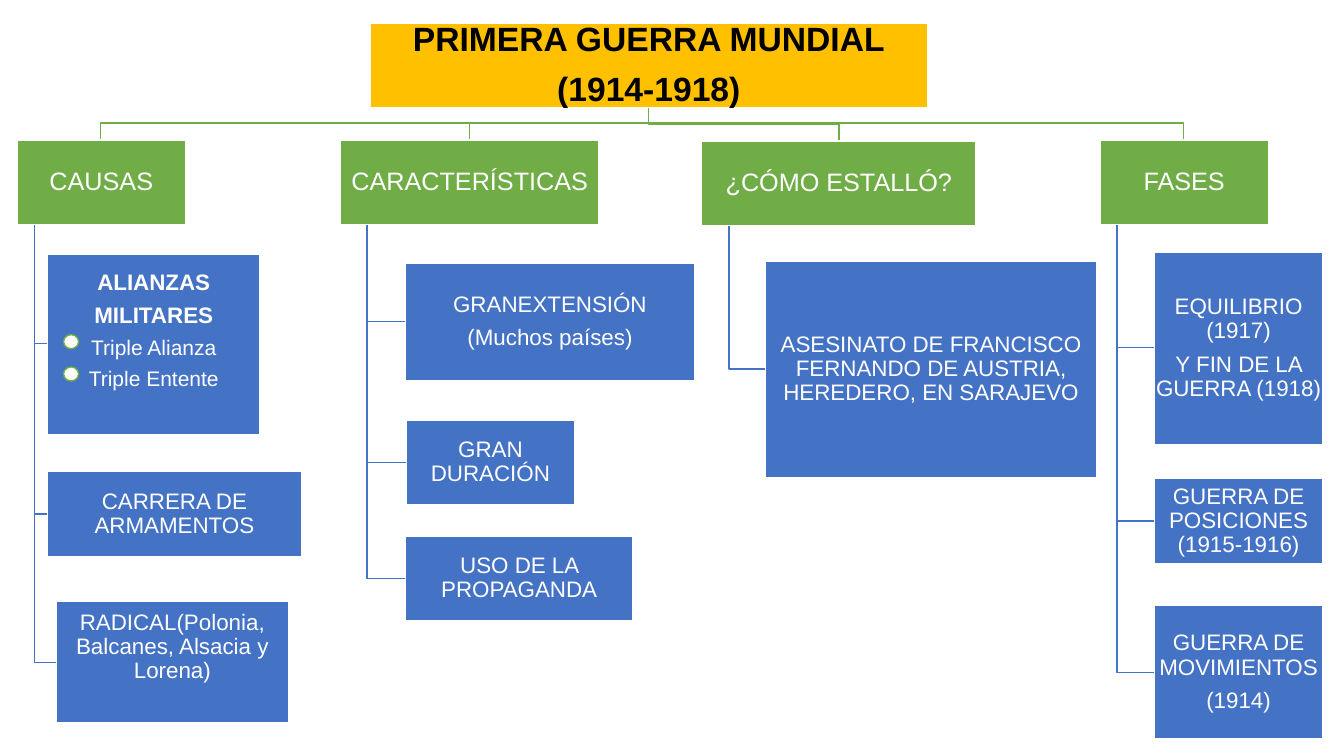
from dataclasses import dataclass

from pptx import Presentation
from pptx.dml.color import RGBColor
from pptx.enum.shapes import MSO_SHAPE as Shape
from pptx.enum.text import MSO_ANCHOR as Anchor, MSO_AUTO_SIZE as AutoSize, PP_ALIGN as Align
from pptx.util import Emu, Pt

PX = 9144  # EMU per px, 100 px to the inch
FONT = "Arial"
WHITE = RGBColor(0xFF, 0xFF, 0xFF)
BLACK = RGBColor(0x00, 0x00, 0x00)
GOLD = RGBColor(0xFF, 0xC0, 0x00)
GREEN = RGBColor(0x70, 0xAD, 0x47)
BLUE = RGBColor(0x44, 0x72, 0xC4)


@dataclass
class Topic:
    box: tuple  # left, top, width, height in px
    lines: list
    sizes: tuple = ()
    bold_lines: int = 0
    top_inset: int = 0  # text hangs from the top when set


TITLE_BOX = (367, 23, 553, 84)
TITLE_LINES = ["PRIMERA GUERRA MUNDIAL", "(1914-1918)"]
BULLET_BOXES = [(63, top, 15, 14) for top in (332, 364)]

# Each branch is a heading followed by its topics
BRANCHES = [
    (Topic((17, 139, 167, 84), ["CAUSAS"]), [
        Topic((47, 252, 211, 179),
              ["ALIANZAS", "MILITARES", "Triple Alianza", "Triple Entente"],
              sizes=(16, 16, 15, 15), bold_lines=2, top_inset=17),
        Topic((47, 468, 252, 84), ["CARRERA DE ARMAMENTOS"]),
        Topic((56, 597, 230, 120),
              ["RADICAL(Polonia, Balcanes, Alsacia y Lorena)"], top_inset=9),
    ]),
    (Topic((338, 139, 256, 84), ["CARACTERÍSTICAS"]), [
        Topic((402, 261, 287, 117), ["GRANEXTENSIÓN", "(Muchos países)"]),
        Topic((403, 417, 167, 84), ["GRAN DURACIÓN"]),
        Topic((402, 532, 226, 84), ["USO DE LA PROPAGANDA"]),
    ]),
    (Topic((696, 140, 272, 84), ["¿CÓMO ESTALLÓ?"]), [
        Topic((759, 259, 329, 215),
              ["ASESINATO DE FRANCISCO FERNANDO DE AUSTRIA, HEREDERO, EN SARAJEVO"]),
    ]),
    (Topic((1091, 139, 167, 84), ["FASES"]), [
        Topic((1145, 250, 167, 191), ["EQUILIBRIO (1917)", "Y FIN DE LA GUERRA (1918)"]),
        Topic((1145, 475, 167, 84), ["GUERRA DE POSICIONES (1915-1916)"]),
        Topic((1145, 601, 167, 132), ["GUERRA DE MOVIMIENTOS", "(1914)"]),
    ]),
]


def emu_box(box):
    return [Emu(length * PX) for length in box]


def paint(shape, fill, line):
    shape.fill.solid()
    shape.fill.fore_color.rgb = fill
    shape.line.color.rgb = line
    shape.line.width = Pt(1)


def write(shape, lines, sizes, color, bold_lines=0, inset=1, top_inset=0):
    frame = shape.text_frame
    frame.text = "\n".join(lines)
    frame.word_wrap = True
    frame.auto_size = AutoSize.NONE
    frame.vertical_anchor = Anchor.TOP if top_inset else Anchor.MIDDLE
    frame.margin_left = frame.margin_right = frame.margin_bottom = Emu(inset * PX)
    frame.margin_top = Emu((top_inset or inset) * PX)
    for index, (paragraph, size) in enumerate(zip(frame.paragraphs, sizes)):
        paragraph.alignment = Align.CENTER
        paragraph.line_spacing = 0.9
        paragraph.space_before = Pt(0)
        paragraph.space_after = Pt(0.4 * size if index < len(lines) - 1 else 0)
        for run in paragraph.runs:
            run.font.name = FONT
            run.font.size = Pt(size)
            run.font.bold = index < bold_lines
            run.font.color.rgb = color


def draw_title(slide, box):
    title = slide.shapes.title
    title.left, title.top, title.width, title.height = emu_box(box)
    paint(title, GOLD, WHITE)
    write(title, TITLE_LINES, (24, 24), BLACK, bold_lines=2, inset=2)


def draw_shape(slide, kind, box, fill, line):
    shape = slide.shapes.add_shape(kind, *emu_box(box))
    shape.shadow.inherit = False
    paint(shape, fill, line)
    return shape


def draw_topic(slide, topic, fill, size):
    shape = draw_shape(slide, Shape.RECTANGLE, topic.box, fill, WHITE)
    sizes = topic.sizes or [size] * len(topic.lines)
    write(shape, topic.lines, sizes, WHITE, topic.bold_lines, top_inset=topic.top_inset)


def draw_elbow(slide, points, color):
    builder = slide.shapes.build_freeform(*points[0], scale=PX)
    builder.add_line_segments(points[1:], close=False)
    elbow = builder.convert_to_shape()
    elbow.shadow.inherit = False
    elbow.fill.background()
    elbow.line.color.rgb = color
    elbow.line.width = Pt(1)


def draw_branch(slide, title_box, heading, topics):
    left, top, width, height = heading.box

    # Line from the title down to the heading
    title_left, title_top, title_width, title_height = title_box
    start_x, center = title_left + title_width // 2, left + width // 2
    bar = top - 17
    draw_elbow(slide, [(start_x, title_top + title_height), (start_x, bar),
                       (center, bar), (center, top)], GREEN)

    # Trunk from the heading to each topic
    trunk = left + round(width / 10)
    for topic in topics:
        topic_left, topic_top, _, topic_height = topic.box
        middle = topic_top + topic_height // 2
        draw_elbow(slide, [(trunk, top + height), (trunk, middle),
                           (topic_left, middle)], BLUE)

    draw_topic(slide, heading, GREEN, 18)
    for topic in topics:
        draw_topic(slide, topic, BLUE, 16)


def main():
    presentation = Presentation()
    presentation.slide_width = Emu(1333 * PX)
    presentation.slide_height = Emu(750 * PX)
    slide = presentation.slides.add_slide(presentation.slide_layouts[5])

    draw_title(slide, TITLE_BOX)
    for heading, topics in BRANCHES:
        draw_branch(slide, TITLE_BOX, heading, topics)
    # Round markers beside the two alliances
    for box in BULLET_BOXES:
        draw_shape(slide, Shape.OVAL, box, WHITE, GREEN)

    presentation.save("out.pptx")


if __name__ == "__main__":
    main()
